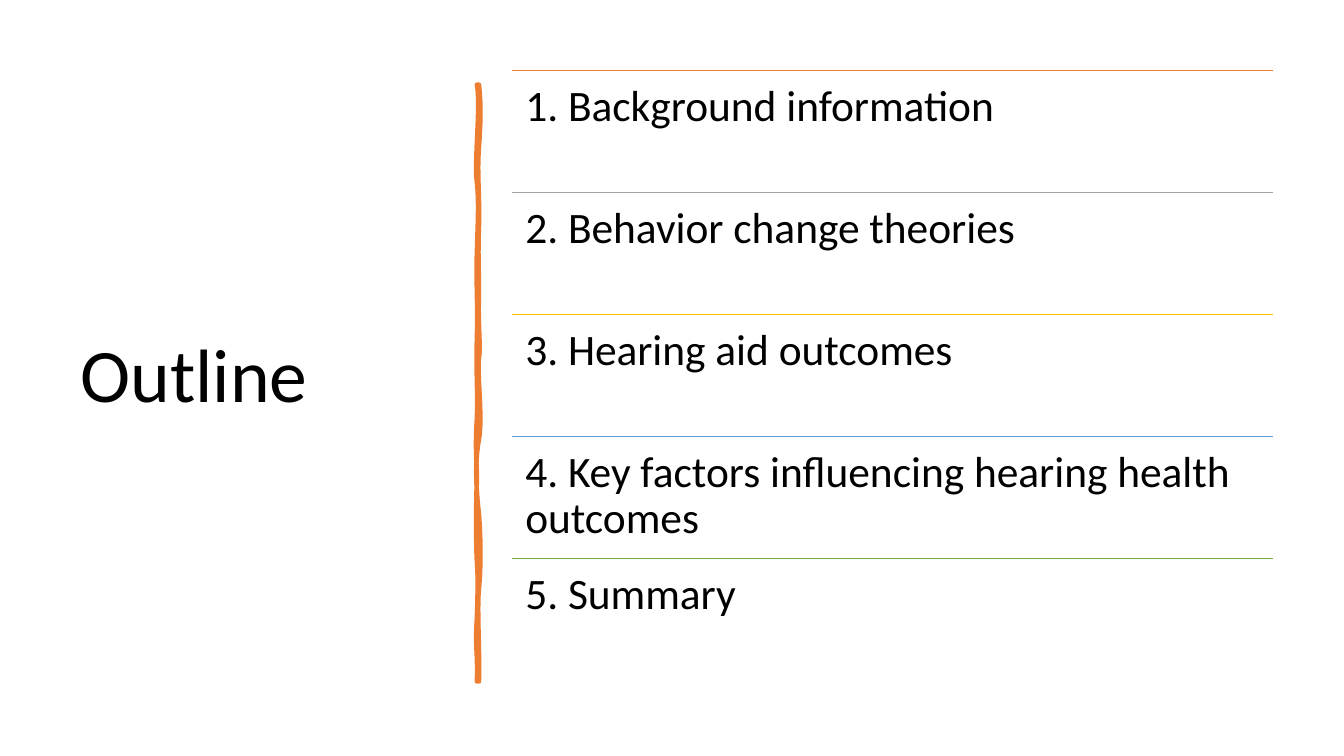
from lxml import etree
from pptx import Presentation
from pptx.dml.color import RGBColor
from pptx.enum import shapes, text
from pptx.oxml.ns import qn
from pptx.util import Inches, Pt

BLACK = RGBColor(0x00, 0x00, 0x00)
ORANGE = RGBColor(0xED, 0x7D, 0x31)
GRAY = RGBColor(0xA5, 0xA5, 0xA5)
GOLD = RGBColor(0xFF, 0xC0, 0x00)
BLUE = RGBColor(0x5B, 0x9B, 0xD5)
GREEN = RGBColor(0x70, 0xAD, 0x47)

prs = Presentation()
prs.slide_width, prs.slide_height = Inches(13.33), Inches(7.5)
slide = prs.slides.add_slide(prs.slide_layouts[6])


def add_text(words, left, top, width, height, size,
             anchor=text.MSO_ANCHOR.TOP, inset_x=0.13, inset_y=0.13):
    frame = slide.shapes.add_textbox(
        Inches(left), Inches(top), Inches(width), Inches(height)).text_frame
    frame.word_wrap = True
    frame.vertical_anchor = anchor
    frame.margin_left = frame.margin_right = Inches(inset_x)
    frame.margin_top = frame.margin_bottom = Inches(inset_y)
    paragraph = frame.paragraphs[0]
    paragraph.text = words
    paragraph.line_spacing = 0.9
    paragraph.font.name = "Calibri"
    paragraph.font.size = Pt(size)
    paragraph.font.color.rgb = BLACK


# Title
add_text("Outline", 0.7, 0.69, 3.74, 6.11, 54,
         anchor=text.MSO_ANCHOR.MIDDLE, inset_x=0.1, inset_y=0.05)

# Hand-drawn divider: each curve is two control points and an end point
start = (4.75, 0.84)
curves = [
    ((4.77, 1.02), (4.77, 1.19), (4.75, 1.46)),
    ((4.73, 1.73), (4.76, 1.95), (4.75, 2.26)),
    ((4.74, 2.57), (4.75, 2.62), (4.75, 2.94)),
    ((4.74, 3.25), (4.77, 3.42), (4.75, 3.56)),
    ((4.73, 3.7), (4.79, 4.14), (4.75, 4.36)),
    ((4.71, 4.57), (4.72, 4.84), (4.75, 5.1)),
    ((4.77, 5.36), (4.77, 5.64), (4.75, 5.84)),
    ((4.73, 6.03), (4.76, 6.5), (4.75, 6.76)),
    ((4.74, 6.76), (4.73, 6.76), (4.73, 6.76)),
    ((4.74, 6.46), (4.71, 6.44), (4.73, 6.13)),
    ((4.74, 5.83), (4.74, 5.7), (4.73, 5.57)),
    ((4.72, 5.44), (4.72, 4.95), (4.73, 4.77)),
    ((4.73, 4.59), (4.71, 4.45), (4.73, 4.15)),
    ((4.74, 3.86), (4.72, 3.73), (4.73, 3.35)),
    ((4.74, 2.98), (4.72, 2.81), (4.73, 2.5)),
    ((4.74, 2.18), (4.75, 2), (4.73, 1.81)),
    ((4.7, 1.63), (4.77, 1.04), (4.73, 0.84)),
]
builder = slide.shapes.build_freeform(Inches(start[0]), Inches(start[1]))
builder.add_line_segments(
    [(Inches(x), Inches(y)) for _, _, (x, y) in curves], close=True)
divider = builder.convert_to_shape()
divider.shadow.inherit = False
divider.fill.solid()
divider.fill.fore_color.rgb = ORANGE
divider.line.color.rgb = ORANGE
divider.line.width = Pt(3.25)
etree.SubElement(divider.line._get_or_add_ln(), qn("a:round"))

# Bend the straight segments into curves
segments = list(divider._element.iter(qn("a:lnTo")))
for segment, curve in zip(segments, curves):
    bend = etree.Element(qn("a:cubicBezTo"))
    for x, y in curve:
        etree.SubElement(bend, qn("a:pt"), x=str(Inches(x) - divider.left),
                         y=str(Inches(y) - divider.top))
    segment.getparent().replace(segment, bend)

# Numbered topics, each under a coloured rule
topics = [
    ("Background information", ORANGE),
    ("Behavior change theories", GRAY),
    ("Hearing aid outcomes", GOLD),
    ("Key factors influencing hearing health outcomes", BLUE),
    ("Summary", GREEN),
]
left, first_top, width, row_height = 5.08, 0.7, 7.55, 1.21
for index, (topic, color) in enumerate(topics):
    top = first_top + index * row_height
    rule = slide.shapes.add_connector(
        shapes.MSO_CONNECTOR.STRAIGHT,
        Inches(left), Inches(top), Inches(left + width), Inches(top))
    rule.line.color.rgb = color
    rule.line.width = Pt(1)
    etree.SubElement(rule._element.spPr, qn("a:effectLst"))
    add_text(f"{index + 1}. {topic}", left, top, width, row_height, 31)

prs.save("out.pptx")
